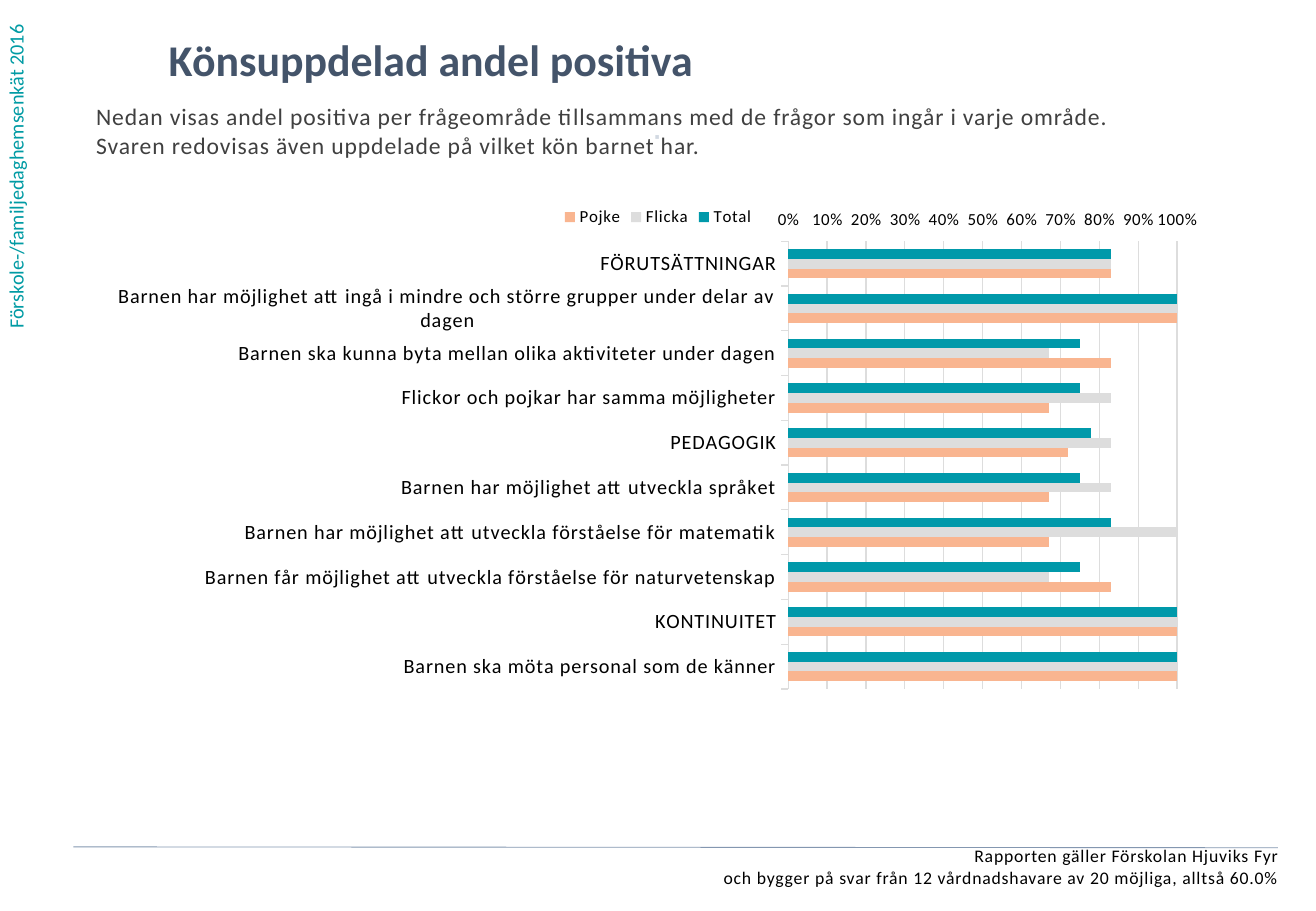
from lxml import etree
from pptx import Presentation
from pptx.chart.data import CategoryChartData
from pptx.dml.color import RGBColor
from pptx.enum.chart import XL_AXIS_CROSSES, XL_CHART_TYPE, XL_LEGEND_POSITION, XL_TICK_MARK
from pptx.enum.shapes import MSO_CONNECTOR
from pptx.enum.text import MSO_ANCHOR, MSO_AUTO_SIZE, PP_ALIGN
from pptx.oxml import parse_xml
from pptx.oxml.ns import qn
from pptx.util import Pt

LEFT, MID, RIGHT = PP_ALIGN.LEFT, PP_ALIGN.CENTER, PP_ALIGN.RIGHT
TOP = MSO_ANCHOR.TOP
FIXED = MSO_AUTO_SIZE.NONE
BARS = XL_CHART_TYPE.BAR_CLUSTERED
ABOVE = XL_LEGEND_POSITION.TOP
FAR = XL_AXIS_CROSSES.MAXIMUM
OUT = XL_TICK_MARK.OUTSIDE
STRAIGHT = MSO_CONNECTOR.STRAIGHT

TEAL, NAVY, GRAY, BLACK = "009BA4", "44546A", "404040", "000000"
GRID, RULE, DOT = "DDDDDD", "8497B0", "D2D9E2"

AREAS = [
    ("FÖRUTSÄTTNINGAR", 0.83, 0.83, 0.83),
    ("Barnen har möjlighet att ingå i mindre och större grupper under delar av dagen", 1, 1, 1),
    ("Barnen ska kunna byta mellan olika aktiviteter under dagen", 0.75, 0.67, 0.83),
    ("Flickor och pojkar har samma möjligheter", 0.75, 0.83, 0.67),
    ("PEDAGOGIK", 0.78, 0.83, 0.72),
    ("Barnen har möjlighet att utveckla språket", 0.75, 0.83, 0.67),
    ("Barnen har möjlighet att utveckla förståelse för matematik", 0.83, 1, 0.67),
    ("Barnen får möjlighet att utveckla förståelse för naturvetenskap", 0.75, 0.67, 0.83),
    ("KONTINUITET", 1, 1, 1),
    ("Barnen ska möta personal som de känner", 1, 1, 1),
]
GROUPS = [("Total", "0099AA"), ("Flicka", GRID), ("Pojke", "F9B590")]
PLOT = {"x": 0.616, "y": 0.088, "w": 0.346, "h": 0.832}


def rgb(code):
    return RGBColor.from_string(code)


class Page:
    face = "Calibri"
    space = "50"

    def __init__(self, deck):
        self.slide = deck.slides.add_slide(deck.slide_layouts[5])
        self.shapes = self.slide.shapes

    def font(self, font, size, color, bold=False):
        font.name = self.face
        font.size = Pt(size)
        font.bold = bold
        font.color.rgb = rgb(color)

    def fill(self, frame, lines, size, color, align=LEFT, bold=False, spaced=True):
        frame.word_wrap = True
        frame.auto_size = FIXED
        frame.vertical_anchor = TOP
        for i, line in enumerate(lines):
            para = frame.add_paragraph() if i else frame.paragraphs[0]
            para.alignment = align
            run = para.add_run()
            run.text = line
            self.font(run.font, size, color, bold)
            if spaced:
                run.font._element.set("spc", self.space)

    def flush(self, frame):
        frame.margin_left = frame.margin_right = 0
        frame.margin_top = frame.margin_bottom = 0

    def title(self, box, line, size, color):
        shape = self.shapes.title
        shape.left, shape.top, shape.width, shape.height = map(Pt, box)
        self.flush(shape.text_frame)
        self.fill(shape.text_frame, [line], size, color, bold=True, spaced=False)

    def text(self, box, lines, size, color, **style):
        frame = self.shapes.add_textbox(*map(Pt, box)).text_frame
        self.flush(frame)
        self.fill(frame, lines, size, color, **style)

    def side(self, box, line, size, color):
        shape = self.shapes.add_textbox(*map(Pt, box))
        self.fill(shape.text_frame, [line], size, color, spaced=False)
        shape.element.txBody.bodyPr.set("vert", "vert270")

    def line(self, ends, color, width):
        rule = self.shapes.add_connector(STRAIGHT, *map(Pt, ends))
        rule.line.color.rgb = rgb(color)
        rule.line.width = Pt(width)
        etree.SubElement(rule.element.spPr, qn("a:effectLst"))

    def chart(self, box, rows, groups, plot):
        data = CategoryChartData(number_format="0%")
        names, *cols = zip(*rows)
        data.categories = names
        for (name, _), vals in zip(groups, cols):
            data.add_series(name, vals)
        chart = self.shapes.add_chart(BARS, *map(Pt, box), data).chart
        chart.has_title = False
        self.font(chart.font, 10, BLACK)
        chart.has_legend = True
        chart.legend.position = ABOVE
        chart.legend.include_in_layout = False
        self.font(chart.legend.font, 10, BLACK)
        bars = chart.plots[0]
        bars.gap_width = 162
        bars.overlap = 0
        bars.vary_by_categories = False
        for series, (_, color) in zip(bars.series, groups):
            series.invert_if_negative = False
            series.format.fill.solid()
            series.format.fill.fore_color.rgb = rgb(color)
        self.axes(chart)
        self.place(chart, plot)
        for props in chart.element.iter(qn("a:defRPr")):
            props.set("spc", self.space)

    def axes(self, chart):
        cat, val = chart.category_axis, chart.value_axis
        cat.reverse_order = True
        cat.crosses = FAR
        cat.major_tick_mark = val.major_tick_mark = OUT
        val.minimum_scale, val.maximum_scale, val.major_unit = 0, 1, 0.1
        val.has_major_gridlines = True
        val.tick_labels.number_format = "0%;0%"
        val.tick_labels.number_format_is_linked = False
        val.format.line.fill.background()
        for line in (cat.format.line, val.major_gridlines.format.line):
            line.color.rgb = rgb(GRID)
            line.width = Pt(0.75)
        self.font(cat.tick_labels.font, 12, BLACK)
        self.font(val.tick_labels.font, 10, BLACK)

    def place(self, chart, plot):
        area = chart.element.find(".//" + qn("c:plotArea"))
        for old in area.findall(qn("c:layout")):
            area.remove(old)
        modes = '<c:layoutTarget val="inner"/><c:xMode val="edge"/><c:yMode val="edge"/>'
        sizes = "".join(f'<c:{key} val="{part}"/>' for key, part in plot.items())
        space = "http://schemas.openxmlformats.org/drawingml/2006/chart"
        area.insert(0, parse_xml(
            f'<c:layout xmlns:c="{space}"><c:manualLayout>{modes}{sizes}</c:manualLayout></c:layout>'
        ))


def main():
    deck = Presentation()
    deck.slide_width, deck.slide_height = Pt(780), Pt(540)
    page = Page(deck)
    page.side((-1.5, 0, 29, 202), "Förskole-/familjedaghemsenkät 2016", 12, TEAL)
    page.title((100, 19.5, 600, 41), "Könsuppdelad andel positiva", 26, NAVY)
    page.text((57, 60.5, 681, 73), [
        "Nedan visas andel positiva per frågeområde tillsammans med de frågor som ingår i varje område.",
        "Svaren redovisas även uppdelade på vilket kön barnet har.",
    ], 14, GRAY)
    page.text((9, 501, 749, 31), [
        "Rapporten gäller Förskolan Hjuviks Fyr",
        "och bygger på svar från 12 vårdnadshavare av 20 möjliga, alltså 60.0%",
    ], 10.5, BLACK, align=RIGHT)
    page.text((278.5, 73.5, 222, 28), ["⋅"], 12, DOT, align=MID, bold=True)
    page.chart((57, 115, 666, 319), AREAS, GROUPS, PLOT)
    page.line((43.5, 502, 757.5, 502.5), RULE, 0.5)
    deck.save("out.pptx")


if __name__ == "__main__":
    main()
